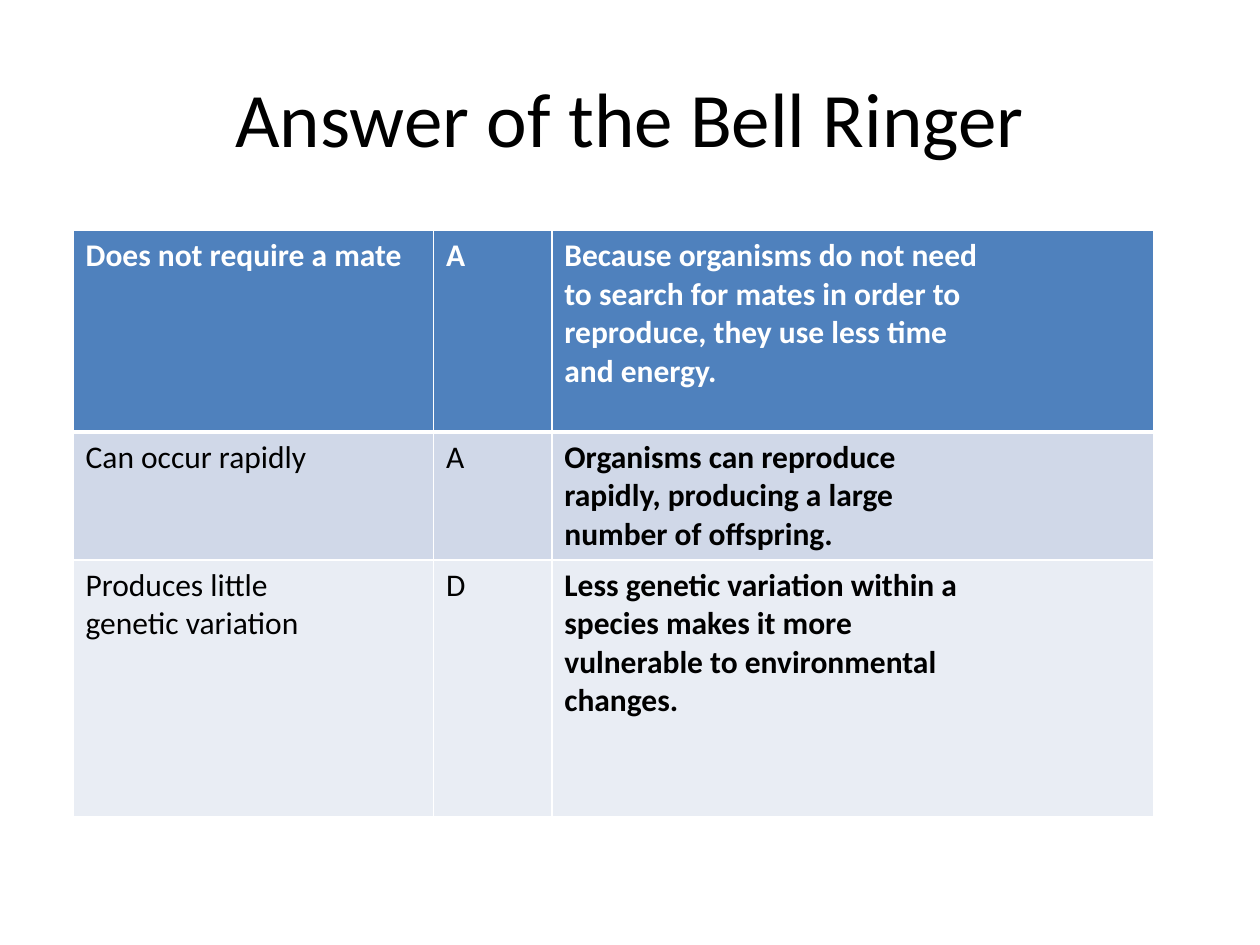
from lxml.etree import SubElement
from pptx import Presentation
from pptx.dml.color import RGBColor
from pptx.enum.text import MSO_ANCHOR, PP_ALIGN
from pptx.oxml.ns import qn
from pptx.util import Inches, Pt

COLORS = {
    "text": "000000",
    "header_text": "FFFFFF",
    "border": "FFFFFF",
    "header": "4F81BD",
    "odd_row": "D0D8E8",
    "even_row": "E9EDF4",
}
ROW_FILLS = ["header", "odd_row", "even_row"]
COLUMN_WIDTHS = [2.86, 0.94, 4.78]
ROW_HEIGHTS = [1.6, 0.96, 2.04]
ANSWERS = [
    ["Does not require a mate", "A",
     "Because organisms do not need\nto search for mates in order to\n"
     "reproduce, they use less time\nand energy."],
    ["Can occur rapidly", "A",
     "Organisms can reproduce\nrapidly, producing a large\nnumber of offspring."],
    ["Produces little\ngenetic variation", "D",
     "Less genetic variation within a\nspecies makes it more\n"
     "vulnerable to environmental\nchanges."],
]


def style_font(font, size, color, bold=False):
    font.name = "Calibri"
    font.size = Pt(size)
    font.bold = bold
    font.color.rgb = RGBColor.from_string(COLORS[color])


def add_title(page, text):
    title = page.shapes.title
    title.left, title.top = Inches(0.5), Inches(0.3)
    title.width, title.height = Inches(9), Inches(1.25)
    frame = title.text_frame
    frame.text = text
    frame.vertical_anchor = MSO_ANCHOR.MIDDLE
    para = frame.paragraphs[0]
    para.alignment = PP_ALIGN.CENTER
    style_font(para.font, 44, "text")


def set_borders(cell, widths):
    """Draw the cell borders; widths maps each side (L, R, T, B) to points."""
    properties = cell._tc.get_or_add_tcPr()
    for side, width in widths.items():
        line = SubElement(properties, qn(f"a:ln{side}"), w=str(Pt(width)))
        fill = SubElement(line, qn("a:solidFill"))
        SubElement(fill, qn("a:srgbClr"), val=COLORS["border"])


def fill_cell(cell, text, row, column):
    is_header = row == 0
    set_borders(cell, {"L": 1, "R": 1,
                       "T": 3 if row == 1 else 1,
                       "B": 3 if is_header else 1})
    cell.fill.solid()
    cell.fill.fore_color.rgb = RGBColor.from_string(COLORS[ROW_FILLS[row]])
    cell.text = text
    for para in cell.text_frame.paragraphs:
        style_font(para.font, 18, "header_text" if is_header else "text",
                   bold=is_header or column == 2)


def add_answer_table(page):
    frame = page.shapes.add_table(
        len(ANSWERS), len(COLUMN_WIDTHS), Inches(0.58), Inches(1.83),
        Inches(sum(COLUMN_WIDTHS)), Inches(sum(ROW_HEIGHTS)))
    table = frame.table
    for column, width in zip(table.columns, COLUMN_WIDTHS):
        column.width = Inches(width)
    for row, height in zip(table.rows, ROW_HEIGHTS):
        row.height = Inches(height)
    for row, texts in enumerate(ANSWERS):
        for column, text in enumerate(texts):
            fill_cell(table.cell(row, column), text, row, column)


def main():
    deck = Presentation()
    deck.slide_width, deck.slide_height = Inches(10), Inches(7.5)
    page = deck.slides.add_slide(deck.slide_layouts.get_by_name("Title Only"))
    add_title(page, "Answer of the Bell Ringer")
    add_answer_table(page)
    deck.save("out.pptx")


if __name__ == "__main__":
    main()
